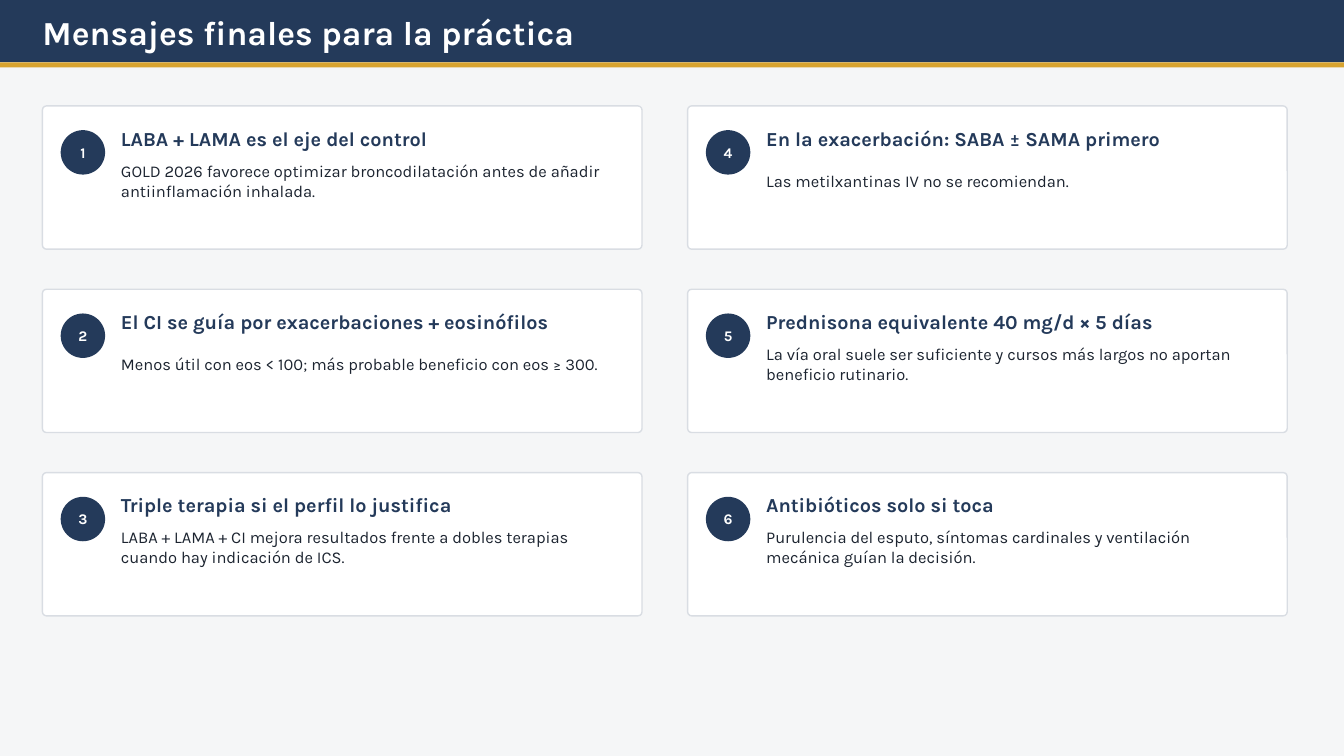
from pptx import Presentation
from pptx.dml.color import RGBColor
from pptx.enum.shapes import MSO_SHAPE
from pptx.enum.text import MSO_ANCHOR, MSO_AUTO_SIZE, PP_ALIGN
from pptx.util import Cm, Pt

COLORS = {
    "background": "F5F6F7",
    "navy": "243A5A",
    "gold": "D8A32F",
    "white": "FFFFFF",
    "border": "D9DDE3",
    "body": "1C2430",
}

MESSAGES = [
    ("LABA + LAMA es el eje del control",
     "GOLD 2026 favorece optimizar broncodilatación antes de añadir antiinflamación inhalada."),
    ("El CI se guía por exacerbaciones + eosinófilos",
     "Menos útil con eos < 100; más probable beneficio con eos ≥ 300."),
    ("Triple terapia si el perfil lo justifica",
     "LABA + LAMA + CI mejora resultados frente a dobles terapias cuando hay indicación de ICS."),
    ("En la exacerbación: SABA ± SAMA primero",
     "Las metilxantinas IV no se recomiendan."),
    ("Prednisona equivalente 40 mg/d × 5 días",
     "La vía oral suele ser suficiente y cursos más largos no aportan beneficio rutinario."),
    ("Antibióticos solo si toca",
     "Purulencia del esputo, síntomas cardinales y ventilación mecánica guían la decisión."),
]
ROWS = 3


def add_filled(kind, left, top, width, height, color):
    """Add a preset shape with a solid fill, no outline and no shadow."""
    sp = s.shapes.add_shape(kind, Cm(left), Cm(top), Cm(width), Cm(height))
    sp.shadow.inherit = False
    sp.fill.solid()
    sp.fill.fore_color.rgb = RGBColor.from_string(COLORS[color])
    sp.line.fill.background()
    return sp


def write(sp, text, size, color, bold=True, align=PP_ALIGN.LEFT):
    """Write one run, vertically centred, in a shape without insets."""
    tf = sp.text_frame
    tf.margin_left = tf.margin_top = tf.margin_right = tf.margin_bottom = 0
    tf.auto_size = MSO_AUTO_SIZE.NONE
    tf.word_wrap = True
    tf.vertical_anchor = MSO_ANCHOR.MIDDLE
    p = tf.paragraphs[0]
    p.alignment = align
    r = p.add_run()
    r.text = text
    r.font.name = "Karla"
    r.font.size = Pt(size)
    r.font.bold = bold
    r.font.color.rgb = RGBColor.from_string(COLORS[color])


prs = Presentation()
prs.slide_width, prs.slide_height = Cm(33.87), Cm(19.05)
s = prs.slides.add_slide(prs.slide_layouts[5])
s.background.fill.solid()
s.background.fill.fore_color.rgb = RGBColor.from_string(COLORS["background"])

# Header
add_filled(MSO_SHAPE.RECTANGLE, 0, 0, 33.87, 1.57, "navy")
add_filled(MSO_SHAPE.RECTANGLE, 0, 1.57, 33.87, 0.13, "gold")
title = s.shapes.title
title.left, title.top, title.width, title.height = Cm(1.07), Cm(0.48), Cm(22.35), Cm(0.66)
write(title, "Mensajes finales para la práctica", 24, "white")
s.shapes.element.append(title.element)  # bring the title in front of the bar

# Numbered cards, filled column by column
for i, (heading, detail) in enumerate(MESSAGES):
    col, row = divmod(i, ROWS)
    x, y = 1.07 + col * 16.26, 2.67 + row * 4.62

    card = add_filled(MSO_SHAPE.ROUNDED_RECTANGLE, x, y, 15.11, 3.61, "white")
    card.adjustments[0] = 0.028
    card.line.color.rgb = RGBColor.from_string(COLORS["border"])
    card.line.width = Pt(1)

    badge = add_filled(MSO_SHAPE.OVAL, x + 0.46, y + 0.61, 1.12, 1.12, "navy")
    write(badge, str(i + 1), 10.5, "white", align=PP_ALIGN.CENTER)

    heading_box = s.shapes.add_textbox(Cm(x + 1.98), Cm(y + 0.58), Cm(11.68), Cm(0.46))
    write(heading_box, heading, 14.2, "navy")

    detail_box = s.shapes.add_textbox(Cm(x + 1.98), Cm(y + 1.37), Cm(12.19), Cm(1.02))
    write(detail_box, detail, 11.8, "body", bold=False)

prs.save("out.pptx")
